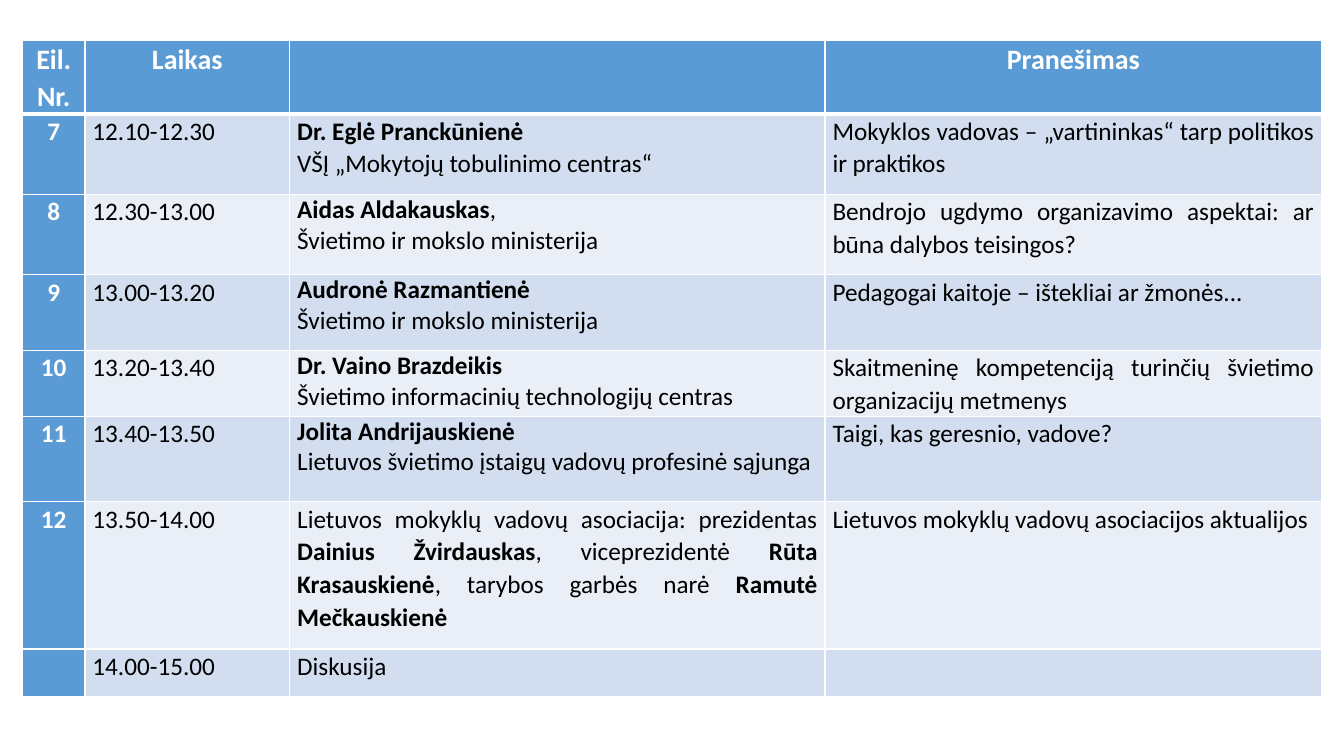
from lxml import etree
from pptx import Presentation
from pptx.dml.color import RGBColor
from pptx.enum.text import PP_ALIGN
from pptx.oxml.ns import qn
from pptx.util import Cm, Pt

LEFT, CENTER, JUSTIFY = PP_ALIGN.LEFT, PP_ALIGN.CENTER, PP_ALIGN.JUSTIFY
COLORS = {"accent": "5B9BD5", "odd": "D2DEEF", "even": "EAEFF7",
          "light": "FFFFFF", "dark": "000000"}
FONT = "Calibri"
LOOSE, SINGLE = 1.07, None
COLUMN_WIDTHS = [1.57, 5.16, 13.49, 12.52]
ROW_HEIGHTS = [0.94, 2.03, 2.03, 1.9, 1.63, 2.16, 3.71, 1.19]
HEADINGS = ["Eil. Nr.", "Laikas", "", "Pranešimas"]
MINISTRY = "Švietimo ir mokslo ministerija"

# Each speaker paragraph is a list of (text, bold) spans.
SESSIONS = [
    ("7", "12.10-12.30",
     [[("Dr. Eglė Pranckūnienė", True)],
      [("VŠĮ „Mokytojų tobulinimo centras“", False)]], LEFT, LOOSE,
     "Mokyklos vadovas – „vartininkas“ tarp politikos ir praktikos"),
    ("8", "12.30-13.00",
     [[("Aidas Aldakauskas", True), (",", False)], [(MINISTRY, False)]], LEFT, SINGLE,
     "Bendrojo ugdymo organizavimo aspektai: ar būna dalybos teisingos?"),
    ("9", "13.00-13.20",
     [[("Audronė Razmantienė", True)], [(MINISTRY, False)]], LEFT, SINGLE,
     "Pedagogai kaitoje – ištekliai ar žmonės..."),
    ("10", "13.20-13.40",
     [[("Dr. Vaino Brazdeikis", True)],
      [("Švietimo informacinių technologijų centras", False)]], LEFT, SINGLE,
     "Skaitmeninę kompetenciją turinčių švietimo organizacijų metmenys"),
    ("11", "13.40-13.50",
     [[("Jolita Andrijauskienė", True)],
      [("Lietuvos švietimo įstaigų vadovų profesinė sąjunga", False)]], LEFT, SINGLE,
     "Taigi, kas geresnio, vadove?"),
    ("12", "13.50-14.00",
     [[("Lietuvos mokyklų vadovų asociacija: prezidentas ", False),
       ("Dainius Žvirdauskas", True), (", viceprezidentė ", False),
       ("Rūta Krasauskienė", True), (", tarybos garbės narė ", False),
       ("Ramutė Mečkauskienė", True)]], JUSTIFY, LOOSE,
     "Lietuvos mokyklų vadovų asociacijos aktualijos"),
    ("", "14.00-15.00", [[("Diskusija", False)]], LEFT, LOOSE, ""),
]


def set_attributes(target, values):
    """Set every named attribute of the target."""
    for name, value in values.items():
        setattr(target, name, value)


def style_cell(cell, fill, top=1, bottom=1):
    """Give a cell its margins, white borders and fill."""
    set_attributes(cell, {"margin_left": Cm(0.19), "margin_right": Cm(0.19),
                          "margin_top": 0, "margin_bottom": 0})
    properties = cell._tc.get_or_add_tcPr()
    for side, width in (("L", 1), ("R", 1), ("T", top), ("B", bottom)):
        line = etree.SubElement(properties, qn(f"a:ln{side}"), w=str(Pt(width)))
        solid = etree.SubElement(line, qn("a:solidFill"))
        etree.SubElement(solid, qn("a:srgbClr"), val=COLORS["light"])
    cell.fill.solid()
    cell.fill.fore_color.rgb = RGBColor.from_string(COLORS[fill])


def write_cell(cell, paragraphs, alignment, color="dark", size=18, spacing=LOOSE):
    """Write paragraphs of (text, bold) spans into a cell."""
    frame = cell.text_frame
    for index, spans in enumerate(paragraphs):
        para = frame.add_paragraph() if index else frame.paragraphs[0]
        set_attributes(para, {"alignment": alignment, "line_spacing": spacing})
        for text, bold in spans:
            span = para.add_run()
            span.text = text
            set_attributes(span.font, {"name": FONT, "size": Pt(size), "bold": bold})
            span.font.color.rgb = RGBColor.from_string(COLORS[color])


def write_header(cells):
    """Fill the heading row."""
    for cell, heading in zip(cells, HEADINGS):
        style_cell(cell, "accent", bottom=3)
        if heading:
            write_cell(cell, [[(heading, True)]], CENTER, "light", 20)


def write_session(cells, session, band, top):
    """Fill one programme row."""
    number, time, speaker, alignment, spacing, topic = session
    for cell, fill in zip(cells, ["accent", band, band, band]):
        style_cell(cell, fill, top=top)
    if number:
        write_cell(cells[0], [[(number, True)]], CENTER, "light")
    write_cell(cells[1], [[(time, False)]], LEFT)
    write_cell(cells[2], speaker, alignment, spacing=spacing)
    if topic:
        write_cell(cells[3], [[(topic, False)]], JUSTIFY)


def add_programme(page, left, top):
    """Place the programme table with its corner at the given point."""
    table = page.shapes.add_table(
        len(ROW_HEIGHTS), len(COLUMN_WIDTHS), left, top,
        Cm(sum(COLUMN_WIDTHS)), Cm(sum(ROW_HEIGHTS))).table
    for column, width in zip(table.columns, COLUMN_WIDTHS):
        column.width = Cm(width)
    for row, height in zip(table.rows, ROW_HEIGHTS):
        row.height = Cm(height)
    write_header(table.rows[0].cells)
    for index, session in enumerate(SESSIONS, 1):
        write_session(list(table.rows[index].cells), session,
                      "odd" if index % 2 else "even", 3 if index == 1 else 1)


def main():
    """Build the deck and save it."""
    deck = Presentation()
    set_attributes(deck, {"slide_width": Cm(33.87), "slide_height": Cm(19.05)})
    page = deck.slides.add_slide(deck.slide_layouts[6])
    add_programme(page, Cm(0.57), Cm(1.02))
    deck.save("out.pptx")


if __name__ == "__main__":
    main()
